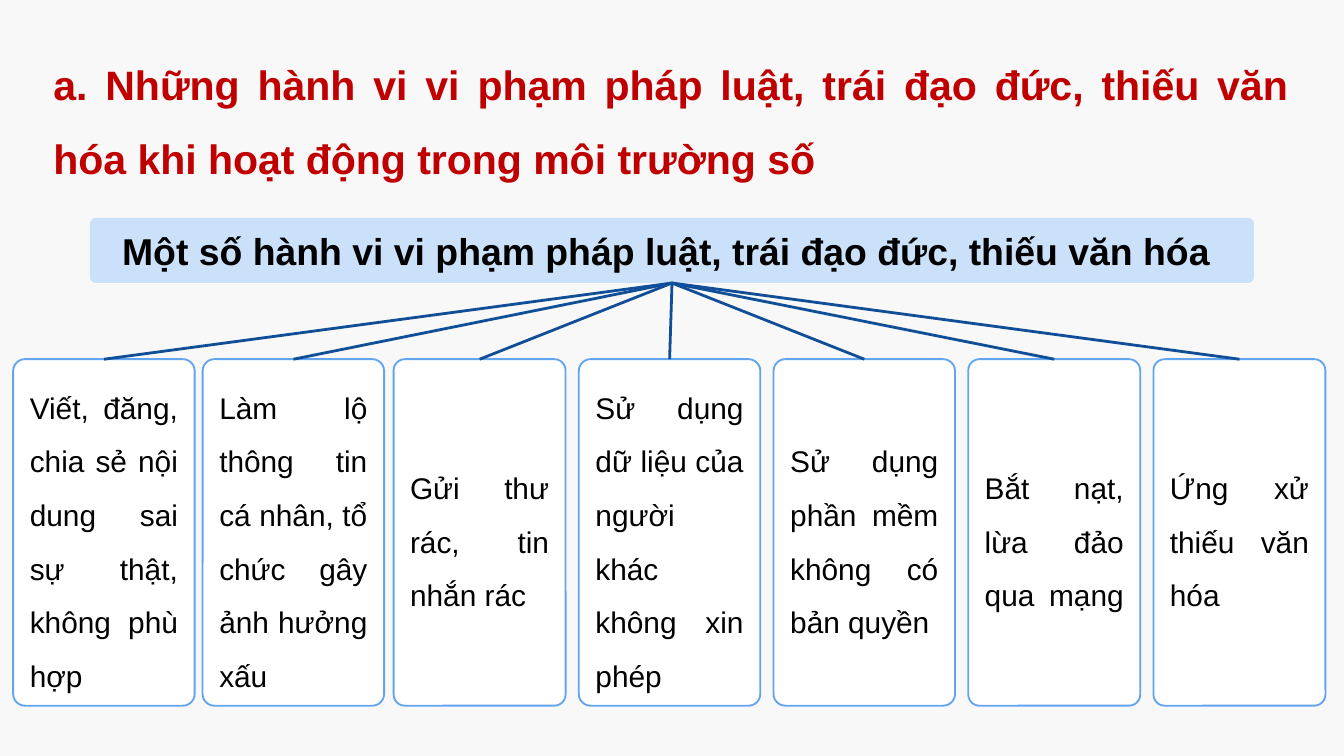
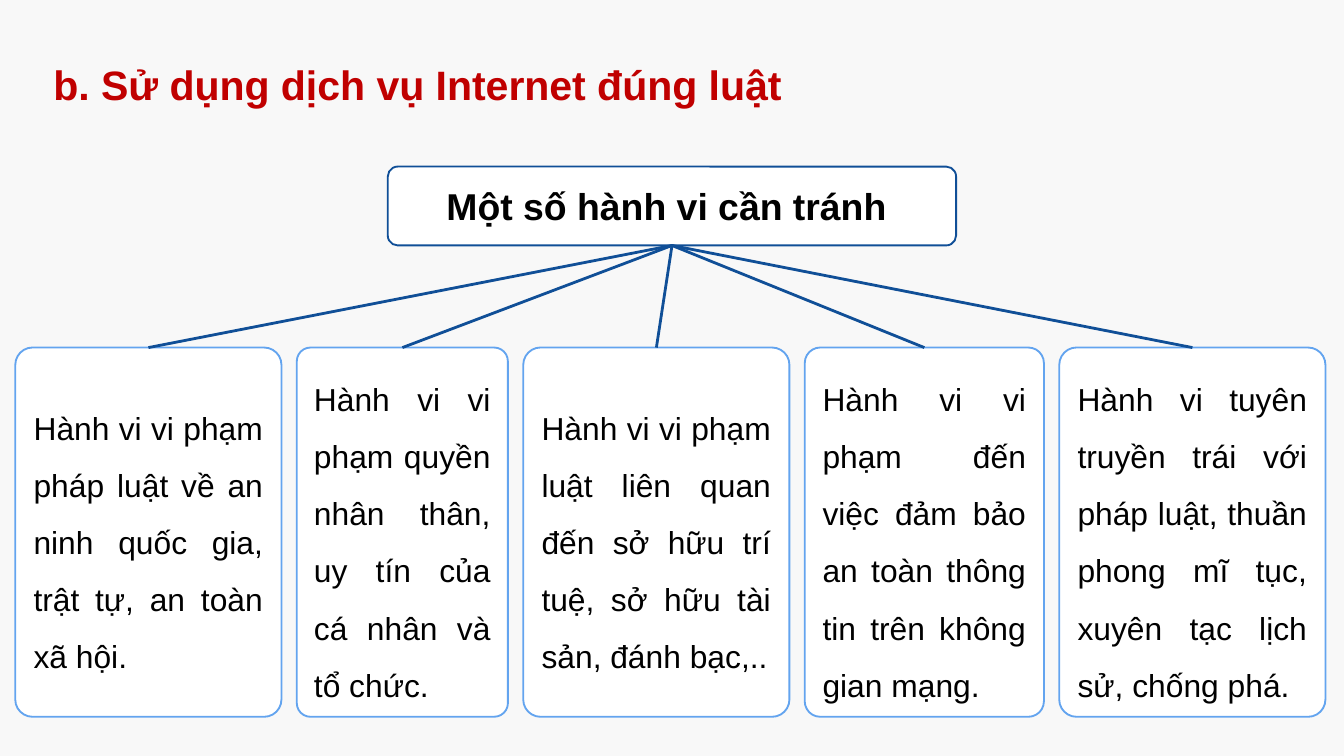
from dataclasses import dataclass

from lxml.etree import SubElement
from pptx import Presentation
from pptx.dml.color import RGBColor
from pptx.enum.shapes import MSO_CONNECTOR as Connector, MSO_SHAPE as Preset
from pptx.enum.text import MSO_ANCHOR as Anchor, MSO_AUTO_SIZE as AutoSize, PP_ALIGN as Align
from pptx.oxml.ns import qn
from pptx.util import Cm, Pt


@dataclass(frozen=True)
class Theme:
    font: str = "Arial"
    background: str = "F8F8F8"
    title: str = "C00000"
    text: str = "000000"
    white: str = "FFFFFF"
    pale_blue: str = "CBE1FA"
    light_blue: str = "63A4EF"
    dark_blue: str = "104F97"
    title_size: float = 22
    topic_size: float = 20
    outline: float = 1
    branch: float = 1.5
    spacing: float = 1.5


class Deck:
    """Holds the theme and the slide being built."""

    def __init__(self, theme):
        self.theme = theme
        self.presentation = Presentation()
        self.presentation.slide_width = Cm(25.4)
        self.presentation.slide_height = Cm(14.29)
        self.slide = None

    def add_slide(self):
        self.slide = self.presentation.slides.add_slide(self.presentation.slide_layouts[6])
        fill = self.slide.background.fill
        fill.solid()
        fill.fore_color.rgb = RGBColor.from_string(self.theme.background)

    def set_text(self, shape, text, size, color, align, bold=False, spacing=None):
        frame = shape.text_frame
        frame.word_wrap = True
        frame.text = text
        paragraph = frame.paragraphs[0]
        paragraph.alignment = align
        paragraph.line_spacing = spacing
        font = paragraph.runs[0].font
        font.name, font.size, font.bold = self.theme.font, Pt(size), bold
        font.color.rgb = RGBColor.from_string(color)

    def title(self, text, height):
        theme = self.theme
        box = self.slide.shapes.add_textbox(Cm(0.76), Cm(0.53), Cm(23.85), Cm(height))
        self.set_text(box, text, theme.title_size, theme.title, Align.JUSTIFY, True, theme.spacing)
        box.text_frame.auto_size = AutoSize.SHAPE_TO_FIT_TEXT

    def rounded_box(self, left, top, width, height, rounding, fill, line=None):
        shape = self.slide.shapes.add_shape(
            Preset.ROUNDED_RECTANGLE, Cm(left), Cm(top), Cm(width), Cm(height))
        shape.adjustments[0] = rounding
        shape.shadow.inherit = False
        shape.fill.solid()
        shape.fill.fore_color.rgb = RGBColor.from_string(fill)
        if line:
            shape.line.color.rgb = RGBColor.from_string(line)
            shape.line.width = Pt(self.theme.outline)
        else:
            shape.line.fill.background()
        shape.text_frame.vertical_anchor = Anchor.MIDDLE
        return shape

    def topic(self, text, left, top, width, height, rounding, fill, line=None):
        shape = self.rounded_box(left, top, width, height, rounding, fill, line)
        self.set_text(shape, text, self.theme.topic_size, self.theme.text, Align.CENTER, True)
        return shape

    def branch_line(self, topic, box):
        line = self.slide.shapes.add_connector(Connector.STRAIGHT, 0, 0, 0, 0)
        line.begin_connect(topic, 2)
        line.end_connect(box, 0)
        line.line.color.rgb = RGBColor.from_string(self.theme.dark_blue)
        line.line.width = Pt(self.theme.branch)
        SubElement(line._element.spPr, qn("a:effectLst"))

    def branches(self, topic, items, top, height, size):
        """Place (gap before, width, text) boxes in a row and join them to the topic."""
        theme = self.theme
        boxes, left = [], 0
        for gap, width, text in items:
            left += gap
            box = self.rounded_box(left, top, width, height, 0.065, theme.white, theme.light_blue)
            self.set_text(box, text, size, theme.text, Align.JUSTIFY, spacing=theme.spacing)
            boxes.append(box)
            left += width
        for box in boxes:
            self.branch_line(topic, box)


# Slide 1: unlawful, unethical and uncultured behaviour
def unlawful_behaviour(deck):
    deck.add_slide()
    deck.title("a. Những hành vi vi phạm pháp luật, trái đạo đức, thiếu văn hóa "
               "khi hoạt động trong môi trường số", 2.9)
    topic = deck.topic("Một số hành vi vi phạm pháp luật, trái đạo đức, thiếu văn hóa ",
                       1.7, 4.12, 22, 1.23, 0.09, deck.theme.pale_blue)
    wide, narrow, gap = 3.43, 3.25, 0.25
    items = [
        (gap, wide, "Viết, đăng, chia sẻ nội dung sai sự thật, không phù hợp "),
        (0.15, wide, "Làm lộ thông tin cá nhân, tổ chức gây ảnh hưởng xấu"),
        (0.18, narrow, "Gửi thư rác, tin nhắn rác "),
        (gap, wide, "Sử dụng dữ liệu của người khác không xin phép "),
        (gap, wide, "Sử dụng phần mềm không có bản quyền "),
        (gap, narrow, "Bắt nạt, lừa đảo qua mạng "),
        (gap, narrow, "Ứng xử thiếu văn hóa "),
    ]
    deck.branches(topic, items, 6.79, 6.55, 16)


# Slide 2: using Internet services lawfully
def lawful_internet_use(deck):
    deck.add_slide()
    deck.title("b. Sử dụng dịch vụ Internet đúng luật", 1.5)
    topic = deck.topic("Một số hành vi cần tránh ", 7.33, 3.15, 10.74, 1.49, 0.126,
                       deck.theme.white, deck.theme.dark_blue)
    wide, middle, narrow, gap = 5.03, 4.52, 3.99, 0.29
    items = [
        (gap, wide, "Hành vi vi phạm pháp luật về an ninh quốc gia, trật tự, an toàn xã hội. "),
        (gap, narrow, "Hành vi vi phạm quyền nhân thân, uy tín của cá nhân và tổ chức. "),
        (gap, wide, "Hành vi vi phạm luật liên quan đến sở hữu trí tuệ, sở hữu tài sản, đánh bạc,.."),
        (gap, middle, "Hành vi vi phạm đến việc đảm bảo an toàn thông tin trên không gian mạng. "),
        (gap, wide, "Hành vi tuyên truyền trái với pháp luật, thuần phong mĩ tục, "
                    "xuyên tạc lịch sử, chống phá."),
    ]
    deck.branches(topic, items, 6.57, 6.98, 17)


def main():
    deck = Deck(Theme())
    unlawful_behaviour(deck)
    lawful_internet_use(deck)
    deck.presentation.save("out.pptx")


if __name__ == "__main__":
    main()
